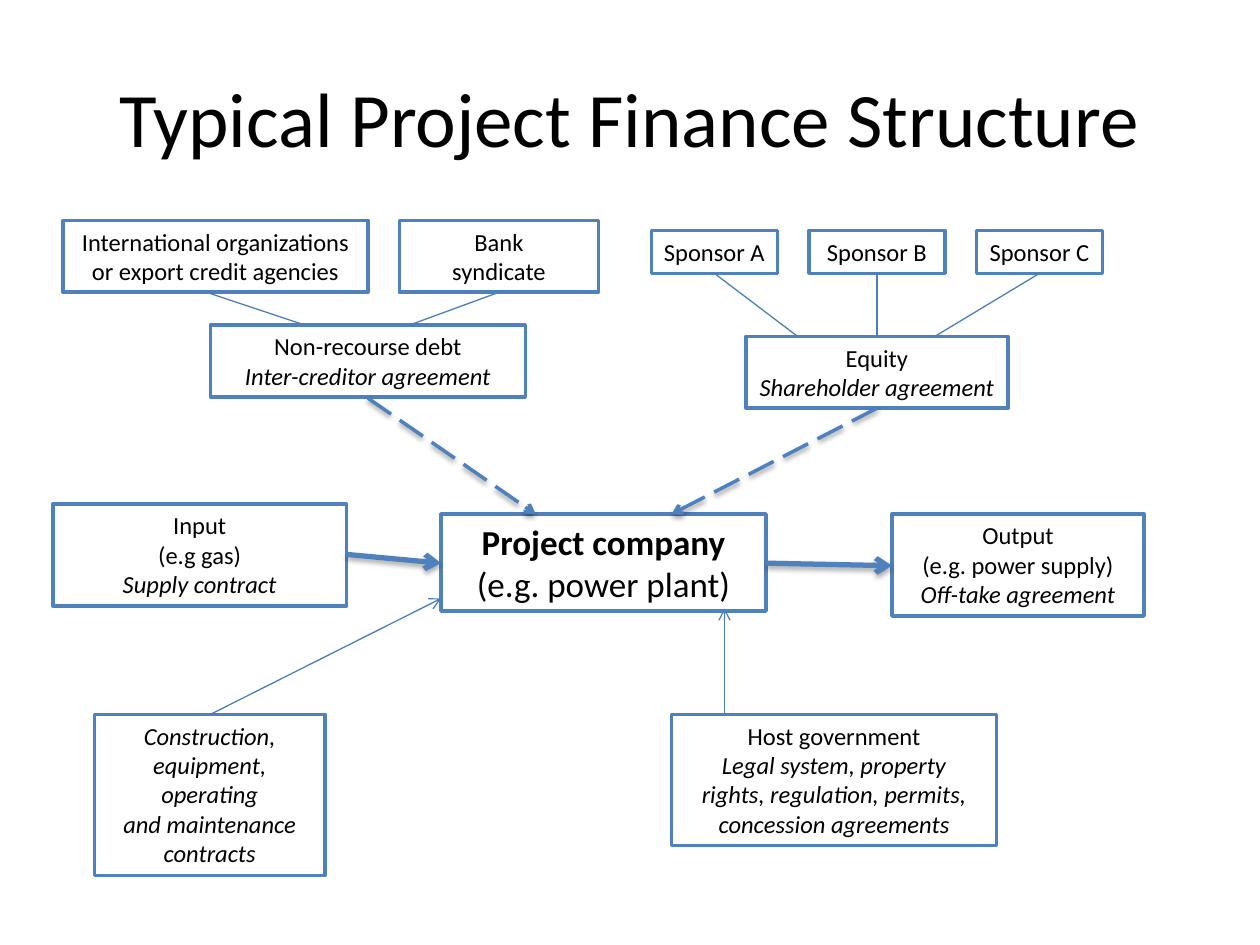
from lxml import etree
from pptx import Presentation
from pptx.dml.color import RGBColor
from pptx.enum import dml, shapes, text
from pptx.oxml import ns
from pptx.util import Inches, Pt

COLORS = {"text": "000000", "fill": "FFFFFF", "line": "4F81BD", "thin": "4B7EBC"}


def rgb(name):
    return RGBColor.from_string(COLORS[name])


def add_line(tf, line, size=14, bold=False, italic=False, font="Calibri"):
    """Add one centred paragraph, filling the first one while it is empty."""
    p = tf.paragraphs[0] if not tf.text else tf.add_paragraph()
    p.alignment = text.PP_ALIGN.CENTER
    r = p.add_run()
    r.text = line
    r.font.name, r.font.size = font, Pt(size)
    r.font.bold, r.font.italic = bold, italic
    r.font.color.rgb = rgb("text")


def sub(parent, tag, **attrs):
    el = etree.SubElement(parent, ns.qn(tag))
    for key, value in attrs.items():
        el.set(key, str(value))
    return el


class Diagram:
    def __init__(self, s):
        self.s = s

    def title(self, x, y, w, h, line):
        tf = self.s.shapes.add_textbox(*map(Inches, (x, y, w, h))).text_frame
        tf.word_wrap = True
        tf.vertical_anchor = text.MSO_ANCHOR.MIDDLE
        add_line(tf, line, size=44)

    def box(self, x, y, w, h, lines):
        """Draw a framed box; each line is (text, format)."""
        sp = self.s.shapes.add_shape(shapes.MSO_SHAPE.RECTANGLE,
                                     *map(Inches, (x, y, w, h)))
        sp.shadow.inherit = False
        sp.fill.solid()
        sp.fill.fore_color.rgb = rgb("fill")
        sp.line.color.rgb = rgb("line")
        sp.line.width = Pt(2)
        tf = sp.text_frame
        tf.word_wrap = True
        tf.vertical_anchor = text.MSO_ANCHOR.TOP
        for line, fmt in lines:
            add_line(tf, line, **fmt)

    def link(self, x1, y1, x2, y2, width=0.75, arrow=False, dashed=False, shadow=None):
        """Draw a line; shadow is (distance in points, opacity in percent)."""
        c = self.s.shapes.add_connector(shapes.MSO_CONNECTOR.STRAIGHT,
                                        *map(Inches, (x1, y1, x2, y2)))
        c.line.color.rgb = rgb("line" if shadow else "thin")
        c.line.width = Pt(width)
        if dashed:
            c.line.dash_style = dml.MSO_LINE.LONG_DASH
        props = c._element.spPr
        if arrow:
            sub(props.find(ns.qn("a:ln")), "a:tailEnd", type="arrow")
        effects = sub(props, "a:effectLst")
        if shadow:
            dist, opacity = shadow
            outer = sub(effects, "a:outerShdw", blurRad=Pt(3.1), dist=Pt(dist),
                        dir=90 * 60000, rotWithShape=0)
            color = sub(outer, "a:srgbClr", val=COLORS["text"])
            sub(color, "a:alpha", val=opacity * 1000)


PLAIN, ITALIC = {}, {"italic": True}

BOXES = [
    # Lenders
    (0.5, 1.75, 2.42, 0.57, [("International organizations", PLAIN),
                             ("or export credit agencies", PLAIN)]),
    (3.17, 1.75, 1.58, 0.57, [("Bank", PLAIN), ("syndicate", PLAIN)]),
    (1.67, 2.58, 2.5, 0.57, [("Non-recourse debt", PLAIN),
                             ("Inter-creditor agreement", ITALIC)]),
    # Supply side
    (0.42, 4, 2.33, 0.81, [("Input", PLAIN), ("(e.g gas)", PLAIN),
                           ("Supply contract", ITALIC)]),
    (0.75, 5.67, 1.83, 1.28, [("Construction,", ITALIC), ("equipment, operating", ITALIC),
                              ("and maintenance", ITALIC), ("contracts", ITALIC)]),
    # Project company
    (3.5, 4.08, 2.58, 0.77, [("Project company", {"size": 20, "bold": True}),
                             ("(e.g. power plant)", {"size": 20})]),
    # Government and buyers
    (5.33, 5.67, 2.58, 1.04, [("Host government", PLAIN),
                              ("Legal system, property", ITALIC),
                              ("rights, regulation, permits,", ITALIC),
                              ("concession agreements", ITALIC)]),
    (7.08, 4.08, 2, 0.81, [("Output", PLAIN), ("(e.g. power supply)", PLAIN),
                           ("Off-take agreement", ITALIC)]),
    # Sponsors
    (5.17, 1.83, 1, 0.34, [("Sponsor A", PLAIN)]),
    (6.42, 1.83, 1.08, 0.34, [("Sponsor B", PLAIN)]),
    (7.75, 1.83, 1, 0.34, [("Sponsor C", PLAIN)]),
    (5.92, 2.67, 2.08, 0.57, [("Equity", PLAIN), ("Shareholder agreement", ITALIC)]),
]

FLOW = {"width": 3, "arrow": True, "shadow": (1.8, 35)}
FUNDING = {"width": 2, "arrow": True, "dashed": True, "shadow": (1.6, 38)}
SUPPORT = {"arrow": True}

LINKS = [
    # Support for the project company
    (5.75, 5.67, 5.75, 4.83, SUPPORT),
    (1.67, 5.67, 3.5, 4.75, SUPPORT),
    # Input and output
    (2.75, 4.4, 3.5, 4.47, FLOW),
    (6.08, 4.47, 7.08, 4.49, FLOW),
    # Debt and equity
    (2.92, 3.16, 4.25, 4.08, FUNDING),
    (6.96, 3.24, 5.33, 4.08, FUNDING),
    # Sponsors to equity
    (5.67, 2.17, 6.33, 2.67, PLAIN),
    (6.96, 2.17, 6.96, 2.67, PLAIN),
    (8.25, 2.17, 7.42, 2.67, PLAIN),
    # Lenders to debt
    (3.96, 2.32, 3.25, 2.58, PLAIN),
    (1.67, 2.33, 2.42, 2.58, PLAIN),
]


def main():
    prs = Presentation()
    prs.slide_width, prs.slide_height = Inches(10), Inches(7.5)
    d = Diagram(prs.slides.add_slide(prs.slide_layouts[6]))
    for box in BOXES:
        d.box(*box)
    for *ends, style in LINKS:
        d.link(*ends, **style)
    d.title(0.5, 0.3, 9, 1.25, "Typical Project Finance Structure")
    prs.save("out.pptx")


if __name__ == "__main__":
    main()
